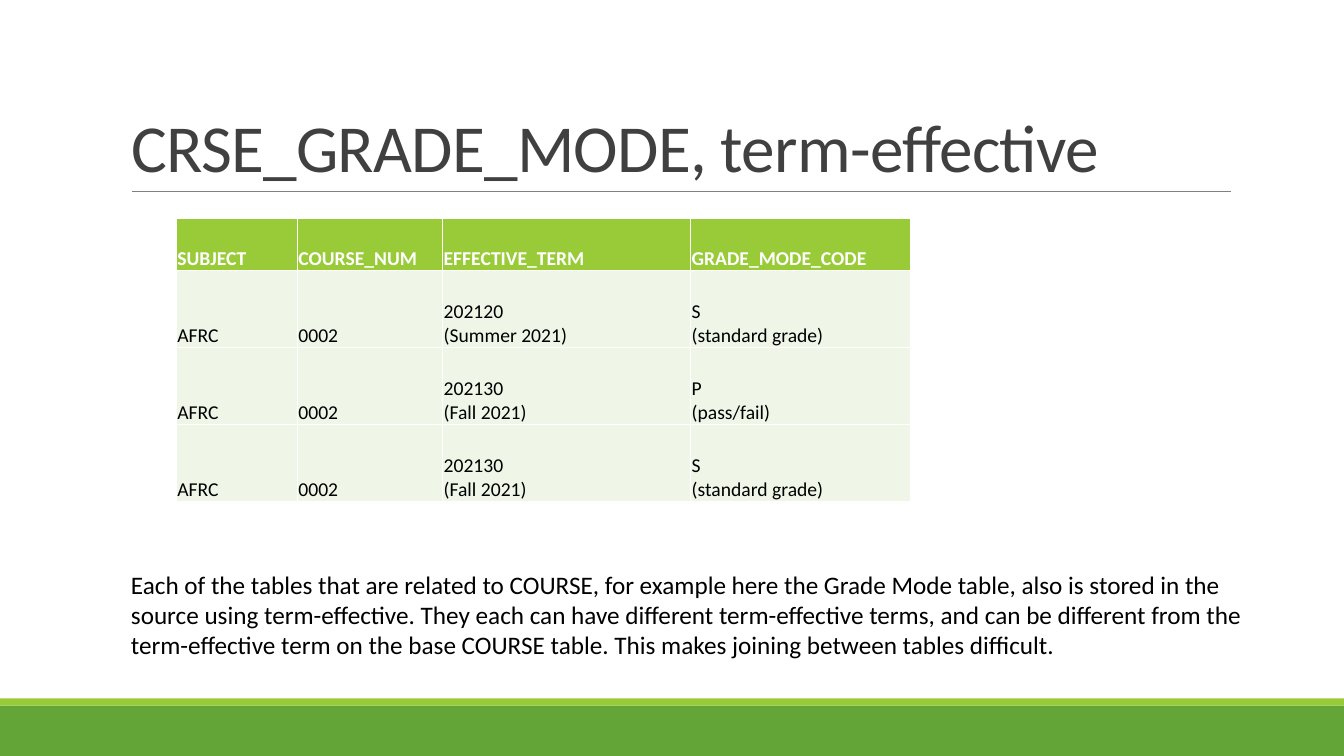
from dataclasses import dataclass

from lxml.etree import SubElement
from pptx import Presentation
from pptx.dml.color import RGBColor as Rgb
from pptx.enum.shapes import MSO_CONNECTOR as Link, MSO_SHAPE as Form
from pptx.enum.text import MSO_ANCHOR as Anchor, MSO_AUTO_SIZE as Fit, PP_ALIGN as Align
from pptx.oxml.ns import qn
from pptx.util import Cm, Pt


@dataclass(frozen=True)
class Theme:
    font: str = "Calibri"
    green: str = "63A537"
    lime: str = "99CB38"
    pale: str = "EFF6E8"
    white: str = "FFFFFF"
    black: str = "000000"
    dark: str = "404040"
    gray: str = "808080"
    head: float = 48
    note: float = 18
    cell: float = 14


@dataclass(frozen=True)
class Box:
    left: float
    top: float
    width: float
    height: float

    def place(self) -> tuple:
        return Cm(self.left), Cm(self.top), Cm(self.width), Cm(self.height)


@dataclass(frozen=True)
class Band:
    box: Box
    color: str


THEME = Theme()
WIDTH, HEIGHT = 33.87, 19.05
BANDS = [
    Band(Box(0, 17.78, WIDTH, 1.27), THEME.green),
    Band(Box(0, 17.6, WIDTH, 0.18), THEME.lime),
]
TITLE = Box(3.05, 0.79, 27.94, 4.04)
NOTE = Box(3.05, 14.22, 28.68, 2.57)
COLS = [3.05, 3.66, 6.25, 5.54]
TALL = [1.3, 1.94, 1.94, 1.94]
GRID = Box(4.45, 5.51, sum(COLS), sum(TALL))
ROWS = [
    ("SUBJECT", "COURSE_NUM", "EFFECTIVE_TERM", "GRADE_MODE_CODE"),
    ("AFRC", "0002", "202120\n(Summer 2021)", "S\n(standard grade)"),
    ("AFRC", "0002", "202130\n(Fall 2021)", "P\n(pass/fail)"),
    ("AFRC", "0002", "202130\n(Fall 2021)", "S\n(standard grade)"),
]
TEXT = (
    "Each of the tables that are related to COURSE, for example here the Grade Mode "
    "table, also is stored in the source using term-effective. They each can have "
    "different term-effective terms, and can be different from the term-effective term "
    "on the base COURSE table. This makes joining between tables difficult."
)


def write(frame, text: str, size: float, color: str, bold: bool = False):
    para = frame.paragraphs[0]
    para.text = text
    para.alignment = Align.LEFT
    for run in para.runs:
        run.font.name = THEME.font
        run.font.size = Pt(size)
        run.font.bold = bold
        run.font.color.rgb = Rgb.from_string(color)
    return para


def paint(item, color: str) -> None:
    item.fill.solid()
    item.fill.fore_color.rgb = Rgb.from_string(color)


def add_band(slide, band: Band) -> None:
    shape = slide.shapes.add_shape(Form.RECTANGLE, *band.box.place())
    shape.shadow.inherit = False
    paint(shape, band.color)
    shape.line.fill.background()


def add_rule(slide) -> None:
    rule = slide.shapes.add_connector(
        Link.STRAIGHT, Cm(3.33), Cm(4.83), Cm(31.01), Cm(4.83))
    rule.line.color.rgb = Rgb.from_string(THEME.gray)
    rule.line.width = Pt(0.5)
    SubElement(rule.element.spPr, qn("a:effectLst"))


def add_title(slide) -> None:
    title = slide.shapes.title
    title.left, title.top, title.width, title.height = TITLE.place()
    frame = title.text_frame
    frame.word_wrap = True
    frame.auto_size = Fit.NONE
    frame.vertical_anchor = Anchor.BOTTOM
    para = write(frame, "CRSE_GRADE_MODE, term-effective", THEME.head, THEME.dark)
    para.line_spacing = 0.85
    for run in para.runs:
        run.font._element.set("spc", "-50")


def edge(cell) -> None:
    props = cell._tc.get_or_add_tcPr()
    for side in "LRTB":
        line = SubElement(props, qn(f"a:ln{side}"), w=str(Pt(1)))
        fill = SubElement(line, qn("a:solidFill"))
        SubElement(fill, qn("a:srgbClr"), val=THEME.white)


def add_grid(slide) -> None:
    table = slide.shapes.add_table(len(ROWS), len(COLS), *GRID.place()).table
    for col, width in zip(table.columns, COLS):
        col.width = Cm(width)
    for at, (row, tall) in enumerate(zip(table.rows, TALL)):
        row.height = Cm(tall)
        head = at == 0
        for cell, text in zip(row.cells, ROWS[at]):
            cell.margin_left = cell.margin_right = cell.margin_top = Cm(0.02)
            cell.margin_bottom = 0
            cell.vertical_anchor = Anchor.BOTTOM
            edge(cell)
            paint(cell, THEME.lime if head else THEME.pale)
            write(cell.text_frame, text, THEME.cell,
                  THEME.white if head else THEME.black, head)


def add_note(slide) -> None:
    frame = slide.shapes.add_textbox(*NOTE.place()).text_frame
    frame.word_wrap = True
    frame.auto_size = Fit.SHAPE_TO_FIT_TEXT
    write(frame, TEXT, THEME.note, THEME.black)


def main() -> None:
    deck = Presentation()
    deck.slide_width, deck.slide_height = Cm(WIDTH), Cm(HEIGHT)
    slide = deck.slides.add_slide(deck.slide_layouts.get_by_name("Title Only"))
    paint(slide.background, THEME.white)
    for band in BANDS:
        add_band(slide, band)
    add_rule(slide)
    add_title(slide)
    add_grid(slide)
    add_note(slide)
    deck.save("out.pptx")


if __name__ == "__main__":
    main()
